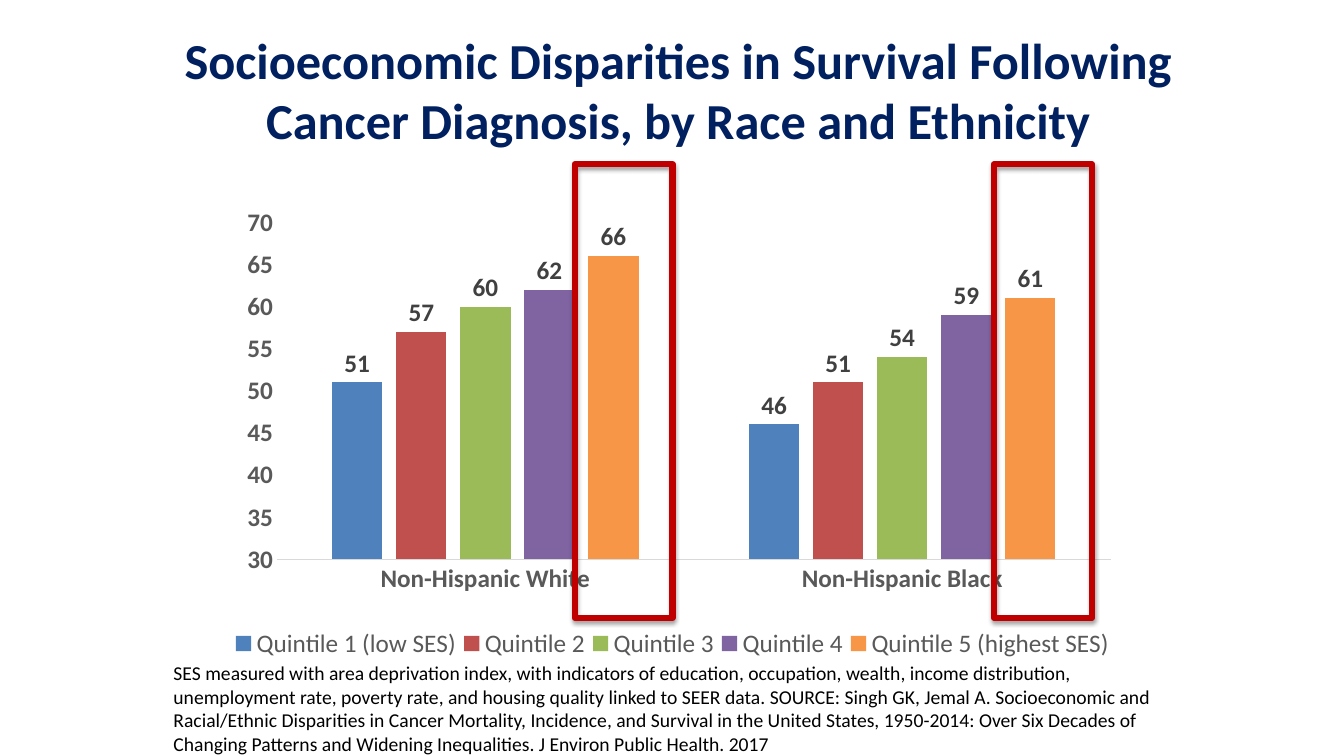
import pptx
import pptx.util
import pptx.chart.data
import pptx.dml.color
import pptx.enum.chart
import pptx.enum.shapes
import pptx.enum.text
import pptx.oxml
import pptx.oxml.ns

Inches = pptx.util.Inches
FONT = "Calibri"
GROUPS = ["Non-Hispanic White", "Non-Hispanic Black"]
RATES = [
    ("Quintile 1 (low SES)", (51, 46), "4F81BD"),
    ("Quintile 2", (57, 51), "C0504D"),
    ("Quintile 3", (60, 54), "9BBB59"),
    ("Quintile 4", (62, 59), "8064A2"),
    ("Quintile 5 (highest SES)", (66, 61), "F79646"),
]
TITLE = ("Socioeconomic Disparities in Survival Following Cancer Diagnosis, "
         "by Race and Ethnicity")
NOTE = ("SES measured with area deprivation index, with indicators of education, "
        "occupation, wealth, income distribution, unemployment rate, poverty rate, "
        "and housing quality linked to SEER data. SOURCE: Singh GK, Jemal A. "
        "Socioeconomic and Racial/Ethnic Disparities in Cancer Mortality, Incidence, "
        "and Survival in the United States, 1950-2014: Over Six Decades of Changing "
        "Patterns and Widening Inequalities. J Environ Public Health. 2017")


def color(value):
    return pptx.dml.color.RGBColor.from_string(value)


def style(font, size, hue, bold=False):
    font.name = FONT
    font.size = pptx.util.Pt(size)
    font.bold = bold
    font.color.rgb = color(hue)


def write(frame, text, size=14, hue="000000", bold=False, align=None, after=0):
    frame.word_wrap = True
    para = frame.paragraphs[0]
    para.alignment = align
    para.space_after = pptx.util.Pt(after)
    run = para.add_run()
    run.text = text
    style(run.font, size, hue, bold)


def layout(box, inner=False):
    target = '<c:layoutTarget val="inner"/>' if inner else ""
    modes = "".join(f'<c:{side}Mode val="edge"/>' for side in "xy")
    sizes = "".join(f'<c:{side} val="{num}"/>' for side, num in zip("xywh", box))
    return pptx.oxml.parse_xml(
        f'<c:layout {pptx.oxml.ns.nsdecls("c")}><c:manualLayout>'
        f"{target}{modes}{sizes}</c:manualLayout></c:layout>")


def place(parent, index, item):
    for old in parent.findall(pptx.oxml.ns.qn("c:layout")):
        parent.remove(old)
    parent.insert(index, item)


def add_title(slide, box):
    title = slide.shapes.title
    title.left, title.top, title.width, title.height = map(Inches, box)
    frame = title.text_frame
    frame.vertical_anchor = pptx.enum.text.MSO_ANCHOR.MIDDLE
    write(frame, TITLE, size=36, hue="002060", bold=True,
          align=pptx.enum.text.PP_ALIGN.CENTER)


def add_rates(slide, box):
    kinds = pptx.enum.chart
    data = pptx.chart.data.CategoryChartData()
    data.categories = GROUPS
    for name, values, hue in RATES:
        data.add_series(name, values)
    chart = slide.shapes.add_chart(
        kinds.XL_CHART_TYPE.COLUMN_CLUSTERED, *map(Inches, box), data).chart
    style(chart.font, 10, "000000")
    chart.has_title = False
    plot = chart.plots[0]
    plot.gap_width = 219
    plot.overlap = -27
    plot.vary_by_categories = False
    for series, (name, values, hue) in zip(plot.series, RATES):
        series.format.fill.solid()
        series.format.fill.fore_color.rgb = color(hue)
        labels = series.data_labels
        labels.show_value = True
        labels.position = kinds.XL_LABEL_POSITION.OUTSIDE_END
        style(labels.font, 18, "404040", True)
    for axis in (chart.category_axis, chart.value_axis):
        axis.major_tick_mark = kinds.XL_TICK_MARK.NONE
        axis.minor_tick_mark = kinds.XL_TICK_MARK.NONE
        axis.has_major_gridlines = False
        style(axis.tick_labels.font, 18, "595959", True)
    base = chart.category_axis.format.line
    base.color.rgb = color("D9D9D9")
    base.width = pptx.util.Pt(0.75)
    scale = chart.value_axis
    scale.minimum_scale, scale.maximum_scale, scale.major_unit = 30, 70, 5
    scale.format.line.fill.background()
    chart.has_legend = True
    legend = chart.legend
    legend.position = kinds.XL_LEGEND_POSITION.BOTTOM
    legend.include_in_layout = False
    style(legend.font, 18, "595959")
    place(legend._element, 1, layout((0.01, 0.86, 0.98, 0.08)))
    area = chart._chartSpace.find(".//" + pptx.oxml.ns.qn("c:plotArea"))
    place(area, 0, layout((0.064, 0.056, 0.919, 0.675), inner=True))


def add_frame(slide, box):
    frame = slide.shapes.add_shape(
        pptx.enum.shapes.MSO_SHAPE.RECTANGLE, *map(Inches, box))
    frame.fill.background()
    frame.line.color.rgb = color("C00000")
    frame.line.width = pptx.util.Pt(4.5)
    blur, gap = pptx.util.Pt(3.1), pptx.util.Pt(1.8)
    frame._element.spPr.append(pptx.oxml.parse_xml(
        f'<a:effectLst {pptx.oxml.ns.nsdecls("a")}>'
        f'<a:outerShdw blurRad="{blur}" dist="{gap}" dir="5400000" rotWithShape="0">'
        '<a:srgbClr val="000000"><a:alpha val="35000"/></a:srgbClr>'
        "</a:outerShdw></a:effectLst>"))


def add_note(slide, box):
    frame = slide.shapes.add_textbox(*map(Inches, box)).text_frame
    frame.margin_left = frame.margin_right = 0
    frame.margin_top = frame.margin_bottom = 0
    frame.auto_size = pptx.enum.text.MSO_AUTO_SIZE.SHAPE_TO_FIT_TEXT
    write(frame, NOTE, after=12)


def main():
    deck = pptx.Presentation()
    deck.slide_width, deck.slide_height = Inches(13.33), Inches(7.5)
    slide = deck.slides.add_slide(deck.slide_layouts[5])
    add_title(slide, (1.67, 0.26, 10.12, 1.25))
    add_rates(slide, (2.17, 1.93, 9, 4.95))
    add_note(slide, (1.72, 6.56, 9.75, 0.94))
    for left in (5.7, 9.86):
        add_frame(slide, (left, 1.63, 0.97, 4.5))
    deck.save("out.pptx")


if __name__ == "__main__":
    main()
